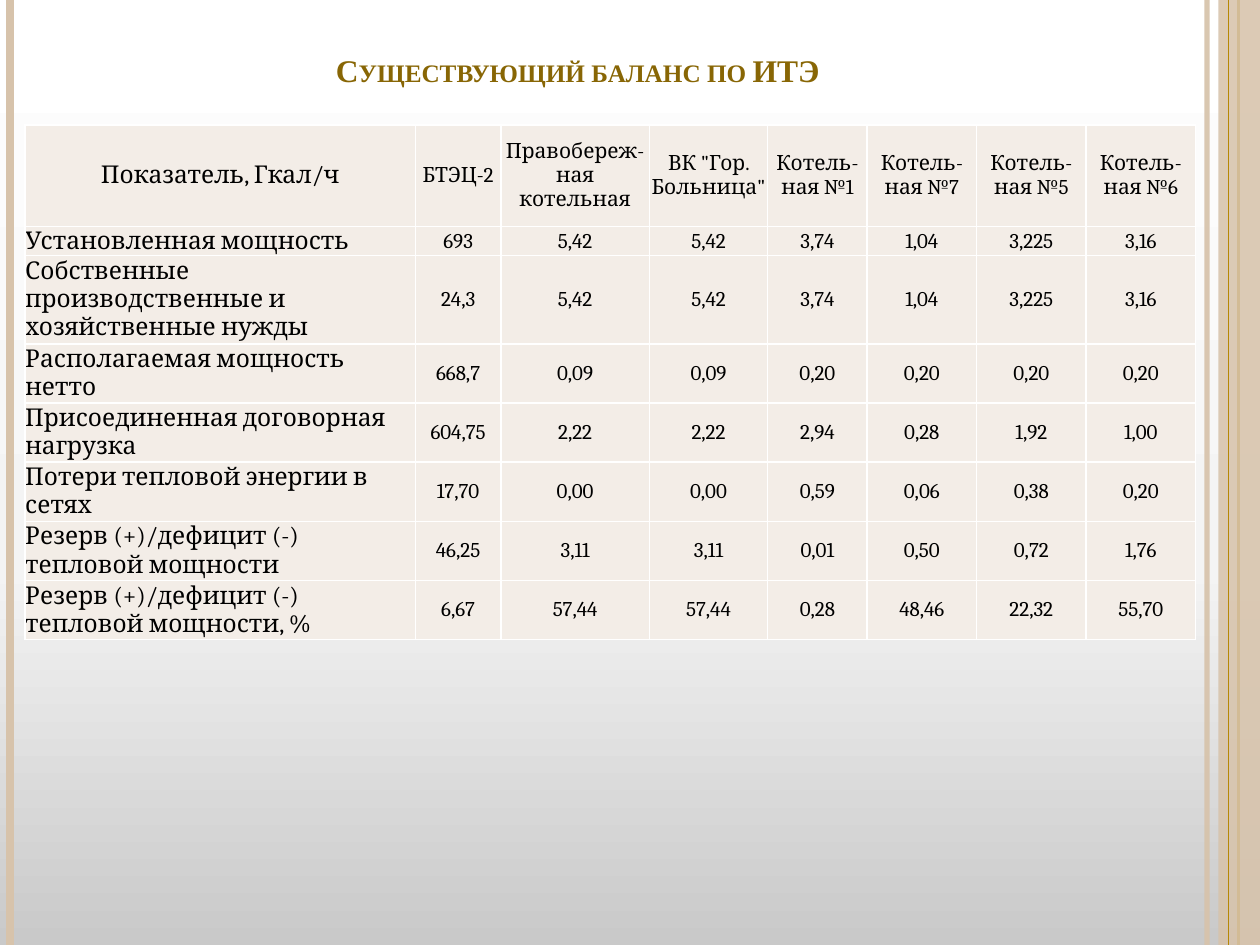
from copy import deepcopy
from dataclasses import dataclass

from pptx import Presentation
from pptx.dml.color import RGBColor
from pptx.enum.shapes import MSO_CONNECTOR, MSO_SHAPE
from pptx.enum.text import MSO_ANCHOR, PP_ALIGN
from pptx.oxml.ns import qn
from pptx.util import Inches, Pt
from lxml import etree

LINE = MSO_CONNECTOR.STRAIGHT
RECT = MSO_SHAPE.RECTANGLE
LEFT, CENTER = PP_ALIGN.LEFT, PP_ALIGN.CENTER
MIDDLE, BOTTOM = MSO_ANCHOR.MIDDLE, MSO_ANCHOR.BOTTOM
WIDE, HIGH = Inches(10), Inches(7.5)


@dataclass(frozen=True)
class Theme:
    """Colours, fonts and type sizes of the slide."""
    sand: str = "D7C3AB"
    gold: str = "B68806"
    brown: str = "886605"
    cream: str = "F3EDE7"
    white: str = "FFFFFF"
    black: str = "000000"
    fade: tuple = ((0, "C9C9C9"), (0.4, "F4F4F4"), (1, "FFFFFF"))
    serif: str = "Times New Roman"
    body: str = "Cambria"
    head: int = 18
    label: int = 14
    value: int = 12


T = Theme()
COLS = (3.1, 0.68, 1.18, 0.94, 0.79, 0.87, 0.87, 0.87)
ROWS = (0.81, 0.23, 0.7) + (0.47,) * 5
DATA = (
    ("Показатель, Гкал/ч", "БТЭЦ-2", "Правобереж-ная котельная", 'ВК "Гор. Больница"',
     "Котель-ная №1", "Котель-ная №7", "Котель-ная №5", "Котель-ная №6"),
    ("Установленная мощность", "693", "5,42", "5,42", "3,74", "1,04", "3,225", "3,16"),
    ("Собственные производственные и хозяйственные нужды",
     "24,3", "5,42", "5,42", "3,74", "1,04", "3,225", "3,16"),
    ("Располагаемая мощность нетто",
     "668,7", "0,09", "0,09", "0,20", "0,20", "0,20", "0,20"),
    ("Присоединенная договорная нагрузка",
     "604,75", "2,22", "2,22", "2,94", "0,28", "1,92", "1,00"),
    ("Потери тепловой энергии в сетях",
     "17,70", "0,00", "0,00", "0,59", "0,06", "0,38", "0,20"),
    ("Резерв (+)/дефицит (-) тепловой мощности",
     "46,25", "3,11", "3,11", "0,01", "0,50", "0,72", "1,76"),
    ("Резерв (+)/дефицит (-) тепловой мощности, %",
     "6,67", "57,44", "57,44", "0,28", "48,46", "22,32", "55,70"),
)


def area(left, top, width, height):
    """Turn percentages of the slide into a box."""
    return (int(WIDE * left / 100), int(HIGH * top / 100),
            int(WIDE * width / 100), int(HIGH * height / 100))


def rgb(code):
    """Read a colour code."""
    return RGBColor.from_string(code)


def dim(fill, share):
    """Make a solid fill partly clear."""
    tone = fill._xPr.find(".//" + qn("a:srgbClr"))
    etree.SubElement(tone, qn("a:alpha"), val=str(share * 1000))


def style(para, font, size, color, align=LEFT, bold=False):
    """Format one paragraph."""
    para.alignment = align
    para.font.name, para.font.size, para.font.bold = font, Pt(size), bold
    para.font.color.rgb = rgb(color)


def paint(slide):
    """Fill the background with an upward fade."""
    fill = slide.background.fill
    fill.gradient()
    fill.gradient_angle = 90
    stops = slide._element.find(".//" + qn("a:gsLst"))
    stops.append(deepcopy(stops[-1]))
    for stop, (spot, color) in zip(fill.gradient_stops, T.fade):
        stop.position, stop.color.rgb = spot, rgb(color)


def rule(slide, box, share, color, weight, clear=None):
    """Draw a full-height line at a share of the box width."""
    left, top, width, height = box
    x = left + int(width * share / 100)
    line = slide.shapes.add_connector(LINE, x, top, x, top + height)
    line.line.color.rgb, line.line.width = rgb(color), Pt(weight)
    etree.SubElement(line._element.spPr, qn("a:effectLst"))
    if clear:
        dim(line.line.fill, clear)


def frame(slide, box):
    """Draw the side bands of the slide."""
    left, top, width, height = box
    rule(slide, box, 95.8, T.sand, 3, 93)
    rule(slide, box, 0.8, T.sand, 4.5)
    rule(slide, box, 98.3, T.gold, 1.5)
    edge = int(width * 0.033)
    band = slide.shapes.add_shape(RECT, left + width - edge, top, edge, height)
    band.shadow.inherit = False
    band.fill.solid()
    band.fill.fore_color.rgb = rgb(T.sand)
    band.line.fill.background()
    dim(band.fill, 87)
    rule(slide, box, 97.5, T.gold, 0.75)


def title(slide, box):
    """Place the small-caps heading."""
    head = slide.shapes.title
    head.left, head.top, head.width, head.height = box
    text = head.text_frame
    text.text = "Существующий баланс по ИТЭ"
    text.vertical_anchor = BOTTOM
    text.margin_bottom = int(box[3] * 0.52)
    para = text.paragraphs[0]
    style(para, T.serif, T.head, T.brown, CENTER, True)
    para.font._element.set("cap", "small")
    slide.shapes._spTree.append(head._element)


def border(cell):
    """Give a cell thin white edges."""
    props = cell._tc.get_or_add_tcPr()
    for spot, side in enumerate(("a:lnL", "a:lnR", "a:lnT", "a:lnB")):
        edge = props.makeelement(qn(side), {"w": str(Pt(1))})
        fill = etree.SubElement(edge, qn("a:solidFill"))
        etree.SubElement(fill, qn("a:srgbClr"), val=T.white)
        props.insert(spot, edge)


def table(slide, box):
    """Build the balance table."""
    grid = slide.shapes.add_table(len(ROWS), len(COLS), *box).table
    grid.first_row = grid.horz_banding = False
    for col, share in zip(grid.columns, COLS):
        col.width = int(box[2] * share / sum(COLS))
    for row, share in zip(grid.rows, ROWS):
        row.height = int(box[3] * share / sum(ROWS))
    for r, row in enumerate(DATA):
        for c, text in enumerate(row):
            cell = grid.cell(r, c)
            cell.text = text
            cell.vertical_anchor = MIDDLE
            cell.margin_left = cell.margin_right = 0
            cell.margin_top = cell.margin_bottom = 0
            cell.fill.solid()
            cell.fill.fore_color.rgb = rgb(T.cream)
            border(cell)
            style(cell.text_frame.paragraphs[0], T.body,
                  T.value if c else T.label, T.black,
                  CENTER if c or not r else LEFT)


def main():
    """Build and save the slide."""
    deck = Presentation()
    deck.slide_width, deck.slide_height = WIDE, HIGH
    slide = deck.slides.add_slide(deck.slide_layouts[5])
    paint(slide)
    frame(slide, area(0, 0, 100, 100))
    title(slide, area(5, 4, 81.7, 11.33))
    table(slide, area(2, 13.2, 92.9, 54.5))
    deck.save("out.pptx")


if __name__ == "__main__":
    main()
